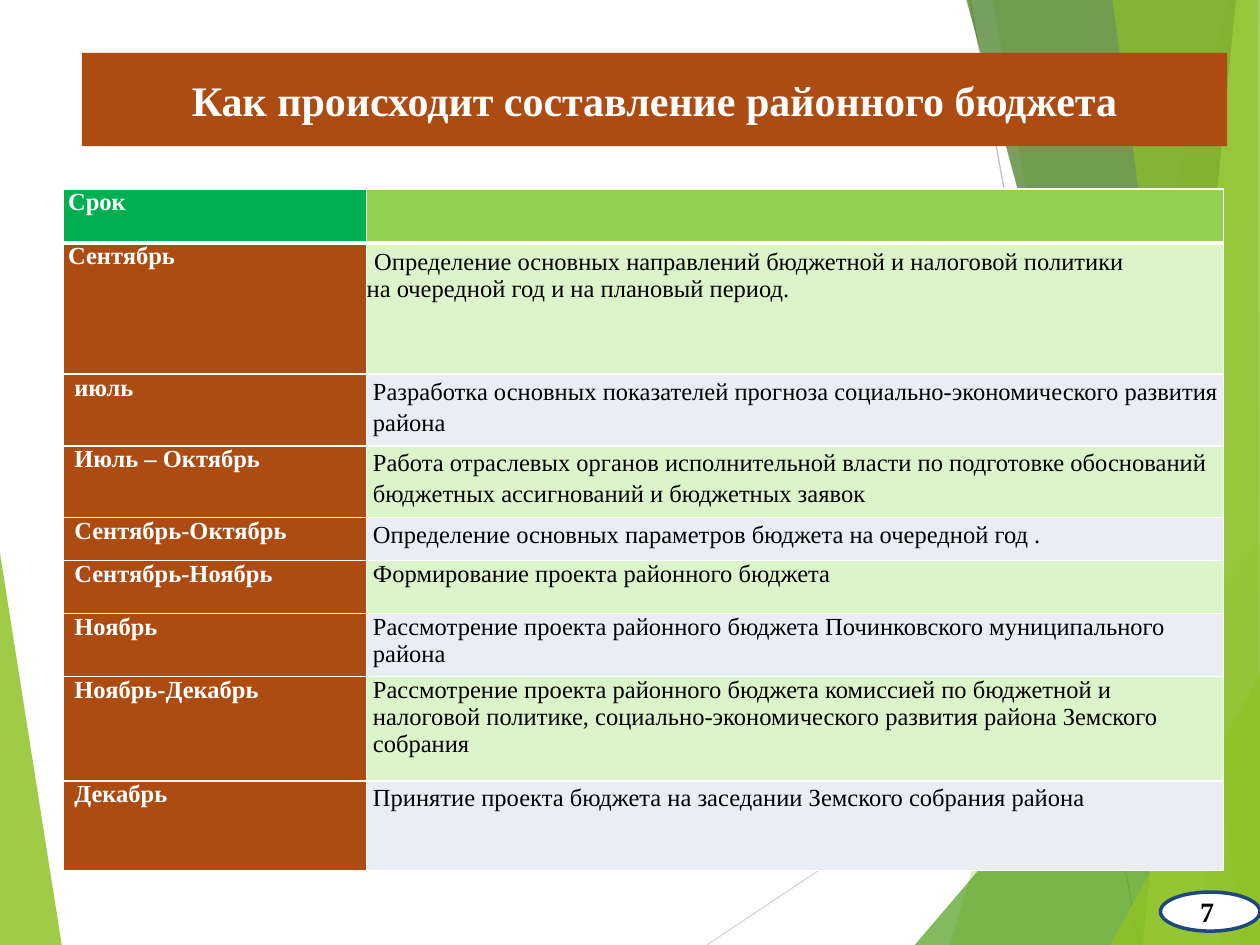
from lxml import etree
from pptx import Presentation
from pptx.dml.color import RGBColor
from pptx.enum.shapes import MSO_CONNECTOR, MSO_SHAPE
from pptx.enum.text import MSO_ANCHOR, MSO_AUTO_SIZE, PP_ALIGN
from pptx.oxml.ns import qn
from pptx.util import Inches, Pt

LINE = MSO_CONNECTOR.STRAIGHT
OVAL = MSO_SHAPE.OVAL
MIDDLE = MSO_ANCHOR.MIDDLE
NO_AUTOFIT = MSO_AUTO_SIZE.NONE
CENTER = PP_ALIGN.CENTER

THEME = {
    "font": "Times New Roman",
    "title_size": 24, "body_size": 14, "number_size": 16,
    "white": "FFFFFF", "black": "000000", "brown": "AD4C12",
    "header": "00B050", "header_light": "92D050",
    "band_green": "DBF4CA", "band_gray": "E9EDF4",
    "badge": "1F487C", "lime": "90C226", "green": "54A021",
    "dark_green": "3F7819", "pale_lime": "C0E474",
    "gray": "BFBFBF", "light_gray": "D9D9D9",
}


def color(name):
    return RGBColor.from_string(THEME[name])


def set_font(p, size, font_color, bold):
    p.font.name = THEME["font"]
    p.font.size = Pt(THEME[size])
    p.font.color.rgb = color(font_color)
    p.font.bold = bold


prs = Presentation()
prs.slide_width, prs.slide_height = Inches(10), Inches(7.5)
s = prs.slides.add_slide(prs.slide_layouts[5])

# Background: thin lines
for x1, y1, x2, y2, name in [(5.61, 7.5, 10, 4.57, "light_gray"),
                             (7.7, 0, 9.04, 7.5, "gray")]:
    line = s.shapes.add_connector(LINE, Inches(x1), Inches(y1), Inches(x2), Inches(y2))
    line.line.color.rgb = color(name)
    line.line.width = Pt(0.75)
    etree.SubElement(line._element.spPr, qn("a:effectLst"))

# Background: translucent facets (colour, opacity in percent, corners)
FACETS = [
    ("lime", 85, [(0, 4.39), (0.49, 7.5), (0, 7.5)]),
    ("lime", 30, [(9.75, 0), (7.54, 7.5), (10, 7.5), (10, 0)]),
    ("lime", 20, [(7.88, 0), (9.19, 7.5), (10, 7.5), (10, 0)]),
    ("green", 72, [(7.26, 7.5), (10, 4.29), (10, 7.5)]),
    ("dark_green", 70, [(7.67, 0), (9.7, 7.5), (10, 7.5), (10, 0)]),
    ("pale_lime", 70, [(9.81, 0), (9.07, 7.5), (10, 7.5), (10, 0)]),
    ("lime", 65, [(8.83, 0), (9.86, 7.5), (10, 7.5), (9.98, 0)]),
    ("lime", 80, [(8.81, 7.5), (10, 5.35), (10, 7.5)]),
]
for name, opacity, corners in FACETS:
    points = [(Inches(x), Inches(y)) for x, y in corners]
    builder = s.shapes.build_freeform(*points[0], scale=1.0)
    builder.add_line_segments(points[1:], close=True)
    facet = builder.convert_to_shape()
    facet.shadow.inherit = False
    facet.line.fill.background()
    facet.fill.solid()
    facet.fill.fore_color.rgb = color(name)
    rgb = facet._element.spPr.find(".//" + qn("a:srgbClr"))
    etree.SubElement(rgb, qn("a:alpha"), val=str(opacity * 1000))

# Title bar, raised above the facets
title = s.shapes.title
s.shapes._spTree.append(title._element)
title.left, title.top = Inches(0.65), Inches(0.42)
title.width, title.height = Inches(9.09), Inches(0.74)
title.fill.solid()
title.fill.fore_color.rgb = color("brown")
tf = title.text_frame
tf.auto_size = NO_AUTOFIT
tf.vertical_anchor = MIDDLE
tf.margin_left = tf.margin_right = tf.margin_top = tf.margin_bottom = 0
tf.text = "Как происходит составление районного бюджета"
tf.paragraphs[0].alignment = CENTER
set_font(tf.paragraphs[0], "title_size", "white", True)

# Schedule: row height, period, period indent, work, line spacing
ROWS = [
    (0.43, "Срок", 0.04, "", 1),
    (1.04, "Сентябрь", 0.04,
     "Определение основных направлений бюджетной и налоговой политики\n"
     "на очередной год и на плановый период.", 1),
    (0.57, "июль", 0.09,
     "Разработка основных показателей прогноза социально-экономического "
     "развития района", 1.15),
    (0.57, "Июль – Октябрь", 0.09,
     "Работа отраслевых органов исполнительной власти по подготовке "
     "обоснований бюджетных ассигнований и бюджетных заявок", 1.15),
    (0.34, "Сентябрь-Октябрь", 0.09,
     "Определение основных параметров бюджета на очередной год .", 1.15),
    (0.42, "Сентябрь-Ноябрь", 0.09, "Формирование проекта районного бюджета", 1),
    (0.5, "Ноябрь", 0.09,
     "Рассмотрение проекта районного бюджета Починковского муниципального района", 1),
    (0.83, "Ноябрь-Декабрь", 0.09,
     "Рассмотрение проекта районного бюджета комиссией по бюджетной и налоговой "
     "политике, социально-экономического развития района Земского собрания", 1),
    (0.71, "Декабрь", 0.09,
     "Принятие проекта бюджета на заседании Земского собрания района", 1.15),
]
table = s.shapes.add_table(len(ROWS), 2, Inches(0.5), Inches(1.5),
                           Inches(9.21), Inches(5.42)).table
table.columns[0].width, table.columns[1].width = Inches(2.41), Inches(6.8)

for i, (height, period, indent, work, spacing) in enumerate(ROWS):
    table.rows[i].height = Inches(height)
    band = "band_green" if i % 2 else "band_gray"
    fills = ("brown", band) if i else ("header", "header_light")
    texts = [(period, indent, 1, "white", True), (work, 0.05, spacing, "black", False)]
    for j, (text, left, ls, font_color, bold) in enumerate(texts):
        cell = table.cell(i, j)
        cell.margin_left = cell.margin_right = cell.margin_top = cell.margin_bottom = 0
        cell.text = text
        for p in cell.text_frame.paragraphs:
            set_font(p, "body_size", font_color, bold)
            p.line_spacing = ls
            p._p.get_or_add_pPr().set("marL", str(Inches(left)))

        # White borders, thicker under the header row
        tcPr = cell._tc.get_or_add_tcPr()
        for side in ("L", "R", "T", "B"):
            thick = (i, side) in [(0, "B"), (1, "T")]
            ln = etree.SubElement(tcPr, qn("a:ln" + side), w=str(Pt(3 if thick else 1)))
            solid = etree.SubElement(ln, qn("a:solidFill"))
            etree.SubElement(solid, qn("a:srgbClr"), val=THEME["white"])
        cell.fill.solid()
        cell.fill.fore_color.rgb = color(fills[j])

# September text starts lower, with only its first line indented
september = table.cell(1, 1)
september.margin_top = Inches(0.04)
for p, left in zip(september.text_frame.paragraphs, (0.06, 0)):
    p._p.get_or_add_pPr().set("marL", str(Inches(left)))

# Page number badge
badge = s.shapes.add_shape(OVAL, Inches(9.21), Inches(7.08), Inches(0.79), Inches(0.31))
badge.shadow.inherit = False
badge.fill.solid()
badge.fill.fore_color.rgb = color("white")
badge.line.color.rgb = color("badge")
badge.line.width = Pt(2)
tf = badge.text_frame
tf.word_wrap = False
tf.vertical_anchor = MIDDLE
tf.margin_left = tf.margin_top = tf.margin_bottom = 0
tf.margin_right = Inches(0.05)
tf.text = "7"
tf.paragraphs[0].alignment = CENTER
set_font(tf.paragraphs[0], "number_size", "black", True)

prs.save("out.pptx")
